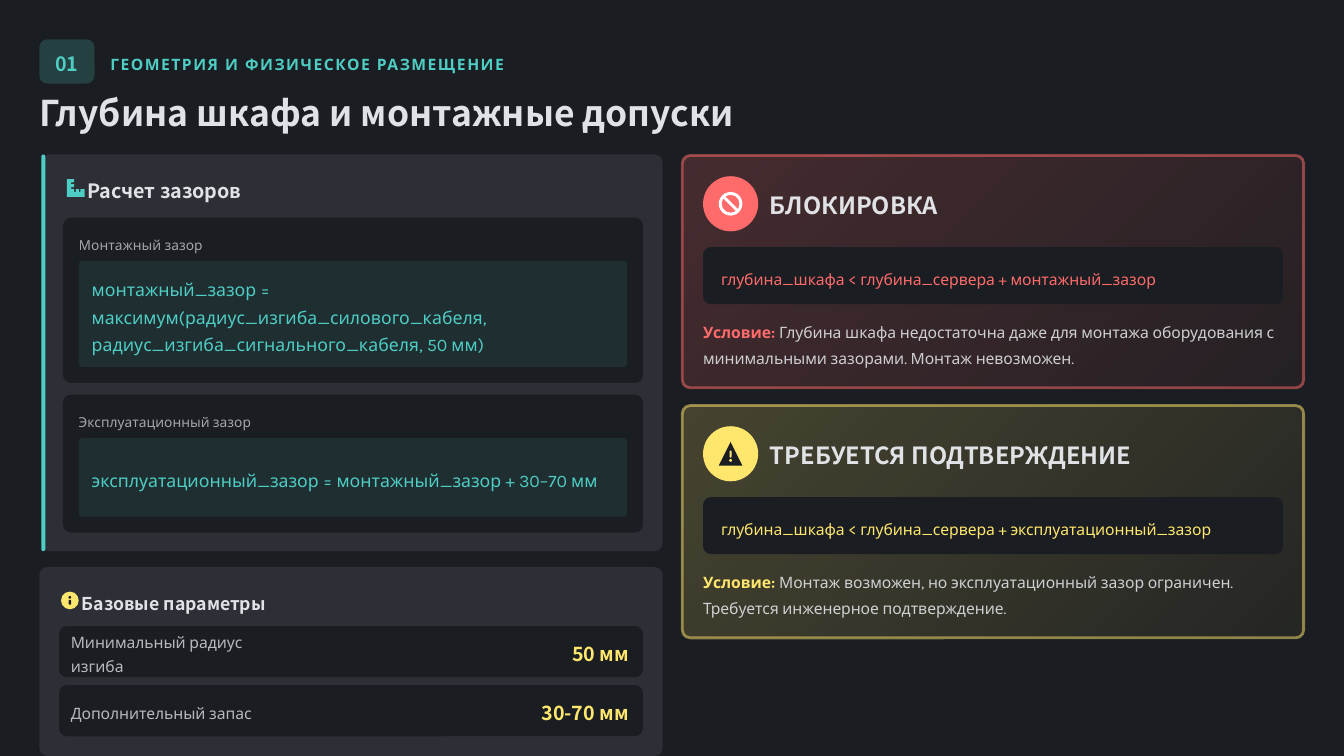
from dataclasses import dataclass

from lxml.etree import SubElement
from pptx import Presentation
from pptx.dml.color import RGBColor as Color
from pptx.enum.shapes import MSO_SHAPE as Shape
from pptx.enum.text import MSO_ANCHOR as Anchor, MSO_AUTO_SIZE as AutoSize, PP_ALIGN as Align
from pptx.oxml.ns import qn
from pptx.util import Inches, Pt

ROWS = 38.4
STEP = Inches(7.5) / ROWS
RADIUS = 0.4


@dataclass(frozen=True)
class Theme:
    """Colours, fonts and type sizes of the deck."""
    back: str = "1A1D21"
    panel: str = "2C3036"
    ink: str = "E0E2E5"
    teal: str = "4ECDC4"
    red: str = "FF6B6B"
    yellow: str = "FFE66D"
    white: str = "FFFFFF"
    head: str = "Noto Sans CJK SC"
    body: str = "Karla"
    title: float = 25.3
    alert: float = 16.9
    large: float = 14.1
    medium: float = 12.6
    text: float = 11.2
    small: float = 9.8


THEME = Theme()


@dataclass(frozen=True)
class Box:
    """A rectangle in grid steps."""
    x: float
    y: float
    w: float
    h: float

    def inner(self, x, y, w, h):
        """Return a box placed relative to this one, in steps."""
        return Box(self.x + x, self.y + y, w, h)

    def share(self, x, y, w, h):
        """Return a box placed by shares of this one."""
        return self.inner(x * self.w, y * self.h, w * self.w, h * self.h)

    def emu(self):
        """Return left, top, width and height in EMU."""
        return [round(value * STEP) for value in (self.x, self.y, self.w, self.h)]


def fade(element, *opacities):
    """Give the colours below an element their opacities in percent, in order."""
    for color, opacity in zip(element.iter(qn("a:srgbClr")), opacities):
        SubElement(color, qn("a:alpha"), val=str(opacity * 1000))


def paint(shape, color, opacity=100):
    """Fill a shape with one colour, without line or shadow."""
    shape.shadow.inherit = False
    shape.line.fill.background()
    shape.fill.solid()
    shape.fill.fore_color.rgb = Color.from_string(color)
    if opacity < 100:
        fade(shape._element.spPr, opacity)
    return shape


def draw(page, kind, box, color, opacity=100):
    """Add a filled preset shape."""
    return paint(page.shapes.add_shape(kind, *box.emu()), color, opacity)


def card(page, box, color, opacity=100, radius=RADIUS):
    """Add a rounded rectangle whose corner radius is in steps."""
    shape = draw(page, Shape.ROUNDED_RECTANGLE, box, color, opacity)
    shape.adjustments[0] = min(radius / min(box.w, box.h), 0.5)
    return shape


def write(shape, text, size, color, font=THEME.body, bold=False, lines=1.2,
          opacity=100, align=Align.LEFT, inset=0):
    """Write one paragraph in a shape and return it."""
    frame = shape.text_frame
    frame.word_wrap = True
    frame.auto_size = AutoSize.NONE
    frame.vertical_anchor = Anchor.MIDDLE
    frame.margin_left = frame.margin_right = round(inset * STEP)
    frame.margin_top = frame.margin_bottom = 0
    para = frame.paragraphs[0]
    para.add_run().text = text
    para.alignment = align
    para.line_spacing = lines
    para.font.name = font
    para.font.size = Pt(size)
    para.font.bold = bold
    para.font.color.rgb = Color.from_string(color)
    if opacity < 100:
        fade(para._p, opacity)
    return para


def label(page, box, text, size, color, **style):
    """Add a text box with one paragraph."""
    return write(page.shapes.add_textbox(*box.emu()), text, size, color, **style)


def mark(page, box, color, bar, dot):
    """Draw the bar and dot of an information or warning sign."""
    card(page, box.share(*bar), color)
    draw(page, Shape.OVAL, box.share(*dot), color)


def ruler_icon(page, box):
    """Draw a corner ruler with notches."""
    outline = [(0, 0), (0.41, 0), (0.41, 0.18), (0.24, 0.18), (0.24, 0.28), (0.41, 0.28),
               (0.41, 0.45), (0.24, 0.45), (0.24, 0.55), (0.41, 0.55), (0.41, 0.73),
               (0.5, 0.73), (0.5, 0.57), (0.67, 0.57), (0.67, 0.73), (0.76, 0.73),
               (0.76, 0.57), (1, 0.57), (1, 1), (0, 1)]
    points = [tuple(box.share(x, y, 0, 0).emu()[:2]) for x, y in outline]
    builder = page.shapes.build_freeform(*points[0], scale=1.0)
    builder.add_line_segments(points[1:])
    paint(builder.convert_to_shape(), THEME.teal)


def info_icon(page, box):
    """Draw an information sign."""
    draw(page, Shape.OVAL, box, THEME.yellow)
    mark(page, box, THEME.back, (0.43, 0.46, 0.14, 0.28), (0.42, 0.25, 0.15, 0.15))


def stop_icon(page, box):
    """Draw a prohibition sign."""
    draw(page, Shape.NO_SYMBOL, box, THEME.white).adjustments[0] = 0.12


def warning_icon(page, box):
    """Draw a warning triangle."""
    draw(page, Shape.ISOSCELES_TRIANGLE, box, THEME.back)
    mark(page, box, THEME.yellow, (0.46, 0.36, 0.08, 0.3), (0.44, 0.72, 0.12, 0.12))


def header(page, box, number, section, title):
    """Place the section badge, its name and the slide title."""
    badge = card(page, box.inner(0, 0, 2.8, 2.25), THEME.teal, 20)
    write(badge, number, THEME.large, THEME.teal, font=THEME.head, bold=True, align=Align.CENTER)
    para = label(page, box.inner(3.6, 0.5, 20.1, 1.2), section, THEME.text, THEME.teal,
                 bold=True, lines=1.3)
    next(para._p.iter(qn("a:defRPr"))).set("spc", "110")
    holder = page.shapes.title
    holder.left, holder.top, holder.width, holder.height = box.inner(0, 2.85, box.w, 2).emu()
    write(holder, title, THEME.title, THEME.ink, font=THEME.head, bold=True, lines=0.9)


def clearances(page, box, heading, formulas):
    """Place the panel of clearance formulas, each with its height."""
    card(page, box, THEME.panel)
    card(page, box.inner(0, 0, 0.2, box.h), THEME.teal)
    ruler_icon(page, box.inner(1.3, 1.25, 0.9, 0.9))
    label(page, box.inner(2.35, 1, 28.7, 1.4), heading, THEME.large, THEME.ink,
          font=THEME.head, bold=True)
    top = 3.2
    for name, formula, height in formulas:
        field = box.inner(1.1, top, box.w - 2.1, height)
        card(page, field, THEME.back)
        label(page, field.inner(0.8, 0.8, 28.2, 1), name, THEME.small, THEME.ink, opacity=70)
        code = card(page, field.inner(0.8, 2.2, field.w - 1.6, height - 3), THEME.teal, 10, 0.2)
        write(code, formula, THEME.medium, THEME.teal, lines=1.3, inset=0.6)
        top += height + 0.6


def parameters(page, box, heading, values):
    """Place the panel of base parameters."""
    card(page, box, THEME.panel)
    info_icon(page, box.inner(1.1, 1.25, 0.9, 0.9))
    label(page, box.inner(2.15, 1, 29, 1.4), heading, THEME.medium, THEME.ink,
          font=THEME.head, bold=True, lines=1.3)
    for index, (name, value) in enumerate(values):
        row = box.inner(1, 3 + 3 * index, box.w - 2, 2.6)
        write(card(page, row, THEME.back), value, THEME.large, THEME.yellow,
              font=THEME.head, bold=True, align=Align.RIGHT, inset=0.6)
        label(page, row.inner(0.6, 0.7, 11.3, 1.2), name, THEME.text, THEME.ink,
              lines=1.3, opacity=80)


def verdict(page, box, color, icon, heading, rule, reason):
    """Place an outlined card with a rule and its explanation."""
    frame = card(page, box, color)
    frame.fill.gradient()
    frame.fill.gradient_angle = 315
    for stop in frame.fill.gradient_stops:
        stop.color.rgb = Color.from_string(color)
    frame.line.color.rgb = Color.from_string(color)
    frame.line.width = Pt(2)
    fade(frame._element.spPr, 20, 5, 50)
    disc = box.inner(1.05, 1.05, 2.8, 2.8)
    draw(page, Shape.OVAL, disc, color)
    icon(page, disc.inner(0.8, 0.8, 1.2, 1.2))
    label(page, box.inner(4.45, 1.65, 24, 1.6), heading, THEME.alert, THEME.ink,
          font=THEME.head, bold=True, lines=1.1)
    field = card(page, box.inner(1.05, 4.65, box.w - 2.1, 2.9), THEME.back)
    write(field, rule, THEME.text, color, lines=1.4, inset=0.8)
    para = label(page, box.inner(1.05, 8.15, 29.85, 2.6), "Условие:", THEME.text, color, lines=1.4)
    para.runs[0].font.bold = True
    span = para.add_run()
    span.text = f" {reason}"
    span.font.color.rgb = Color.from_string(THEME.ink)
    fade(span._r, 90)


def main():
    """Build the slide and save the deck."""
    deck = Presentation()
    deck.slide_width, deck.slide_height = Inches(13.33), Inches(7.5)
    page = deck.slides.add_slide(deck.slide_layouts[5])
    page.background.fill.solid()
    page.background.fill.fore_color.rgb = Color.from_string(THEME.back)
    header(page, Box(2, 2, 65.2, 5), "01", "ГЕОМЕТРИЯ И ФИЗИЧЕСКОЕ РАЗМЕЩЕНИЕ",
           "Глубина шкафа и монтажные допуски")
    clearances(page, Box(2.1, 7.85, 31.55, 20.15), "Расчет зазоров", [
        ("Монтажный зазор", "монтажный_зазор = максимум(радиус_изгиба_силового_кабеля, "
         "радиус_изгиба_сигнального_кабеля, 50 мм)", 8.4),
        ("Эксплуатационный зазор", "эксплуатационный_зазор = монтажный_зазор + 30–70 мм", 7)])
    parameters(page, Box(2, 28.8, 31.65, 9.6), "Базовые параметры", [
        ("Минимальный радиус изгиба", "50 мм"), ("Дополнительный запас", "30-70 мм")])
    verdicts = [
        (THEME.red, stop_icon, "БЛОКИРОВКА", "глубина_шкафа < глубина_сервера + монтажный_зазор",
         "Глубина шкафа недостаточна даже для монтажа оборудования с минимальными зазорами. "
         "Монтаж невозможен."),
        (THEME.yellow, warning_icon, "ТРЕБУЕТСЯ ПОДТВЕРЖДЕНИЕ",
         "глубина_шкафа < глубина_сервера + эксплуатационный_зазор",
         "Монтаж возможен, но эксплуатационный зазор ограничен. "
         "Требуется инженерное подтверждение.")]
    for index, content in enumerate(verdicts):
        verdict(page, Box(34.65, 7.9 + 12.7 * index, 31.55, 11.8), *content)
    deck.save("out.pptx")


if __name__ == "__main__":
    main()
